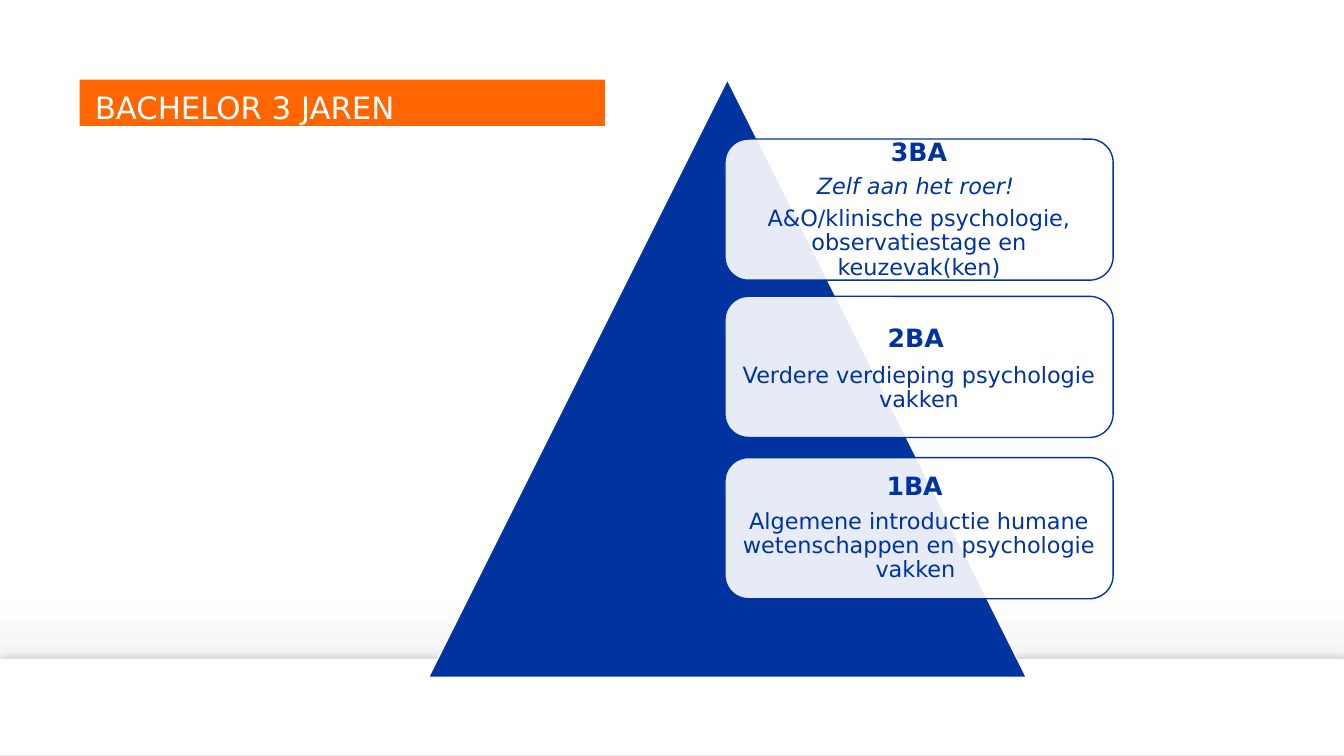
"""Build the slide on the three bachelor years in psychology."""
from dataclasses import dataclass

from lxml.etree import SubElement
from pptx import Presentation
from pptx.dml.color import RGBColor
from pptx.enum.shapes import MSO_SHAPE as Preset
from pptx.enum.text import MSO_ANCHOR as Anchor, MSO_AUTO_SIZE as AutoSize, PP_ALIGN as Align
from pptx.oxml.ns import qn
from pptx.shapes.autoshape import Shape
from pptx.slide import Slide
from pptx.text.text import TextFrame
from pptx.util import Inches, Pt


@dataclass(frozen=True)
class Theme:
    blue: str = "00339F"
    orange: str = "FF6600"
    white: str = "FFFFFF"
    black: str = "000000"
    background: tuple = ((0, "FFFFFF"), (79, "FEFEFE"), (92, "EDEDED"))
    font: str = "DejaVu Sans"
    spare_font: str = "Calibri"
    title_size: int = 22
    year_size: int = 18
    body_size: int = 16
    spare_size: int = 21


@dataclass(frozen=True)
class Box:
    left: float
    top: float
    width: float
    height: float

    def lengths(self) -> tuple:
        return tuple(Inches(n) for n in (self.left, self.top, self.width, self.height))


@dataclass(frozen=True)
class YearCard:
    top: float
    year: str
    body: str
    motto: str = ""
    spare: str = ""


THEME = Theme()
CARDS = (
    YearCard(1.38, "3BA", "A&O/klinische psychologie, observatiestage en keuzevak(ken)",
             motto="Zelf aan het roer! "),
    YearCard(2.94, "2BA", "Verdere verdieping psychologie vakken", spare=" "),
    YearCard(4.54, "1BA ", "Algemene introductie humane wetenschappen en psychologie vakken "),
)


def add_color(parent, color: str, alpha: int = 100) -> None:
    element = SubElement(parent, qn("a:srgbClr"), val=color)
    if alpha < 100:
        SubElement(element, qn("a:alpha"), val=str(alpha * 1000))


def paint_background(slide: Slide) -> None:
    fill = slide.background.fill
    fill.gradient()
    fill.gradient_angle = 270
    stops = slide.background._cSld.find(".//" + qn("a:gsLst"))
    for stop in list(stops):
        stops.remove(stop)
    for position, color in THEME.background:
        add_color(SubElement(stops, qn("a:gs"), pos=str(position * 1000)), color)


def add_panel(slide: Slide, preset: Preset, box: Box, fill: str,
              line: str = "", alpha: int = 100) -> Shape:
    shape = slide.shapes.add_shape(preset, *box.lengths())
    shape.shadow.inherit = False
    shape.fill.solid()
    shape.fill.fore_color.rgb = RGBColor.from_string(fill)
    if alpha < 100:
        color = shape._element.spPr.find(qn("a:solidFill")).find(qn("a:srgbClr"))
        SubElement(color, qn("a:alpha"), val=str(alpha * 1000))
    if line:
        shape.line.color.rgb = RGBColor.from_string(line)
        shape.line.width = Pt(1)
    else:
        shape.line.fill.background()
    return shape


def cast_shadow_upward(shape: Shape) -> None:
    effects = shape._element.spPr.find(qn("a:effectLst"))
    shadow = SubElement(effects, qn("a:outerShdw"), blurRad=str(Pt(4)), dist=str(Pt(3)),
                        dir=str(270 * 60000), algn="b", rotWithShape="0")
    add_color(shadow, THEME.black, alpha=10)


def add_run(paragraph, text: str, *, size: int, color: str, font: str = THEME.font,
            bold: bool = False, italic: bool = False) -> None:
    run = paragraph.add_run()
    run.text = text
    run.font.name, run.font.size = font, Pt(size)
    run.font.bold, run.font.italic = bold, italic
    run.font.color.rgb = RGBColor.from_string(color)


def set_frame(frame: TextFrame, anchor: Anchor, margins: tuple, wrap: bool) -> None:
    frame.auto_size = AutoSize.NONE
    frame.word_wrap = wrap
    frame.vertical_anchor = anchor
    (frame.margin_left, frame.margin_top,
     frame.margin_right, frame.margin_bottom) = (Inches(n) for n in margins)


def add_card(slide: Slide, card: YearCard) -> None:
    shape = add_panel(slide, Preset.ROUNDED_RECTANGLE, Box(7.19, card.top, 3.85, 1.4),
                      THEME.white, THEME.blue, alpha=90)
    frame = shape.text_frame
    set_frame(frame, Anchor.MIDDLE, (0.07,) * 4, wrap=True)
    lines = [(card.year, THEME.year_size, True, False),
             (card.motto, THEME.body_size, False, True),
             (card.body, THEME.body_size, False, False)]
    for text, size, bold, italic in (line for line in lines if line[0]):
        paragraph = frame.add_paragraph() if frame.paragraphs[0].runs else frame.paragraphs[0]
        paragraph.alignment = Align.CENTER
        paragraph.line_spacing = 0.9
        space_after = SubElement(paragraph._p.get_or_add_pPr(), qn("a:spcAft"))
        SubElement(space_after, qn("a:spcPct"), val="35000")
        add_run(paragraph, text, size=size, color=THEME.blue, bold=bold, italic=italic)
    if card.spare:
        add_run(frame.paragraphs[0], card.spare, size=THEME.spare_size, color=THEME.black,
                font=THEME.spare_font, bold=True)


def format_title(slide: Slide, text: str) -> None:
    title = slide.shapes.title
    title.left, title.top, title.width, title.height = Box(0.79, 0.79, 5.21, 0.46).lengths()
    title.fill.solid()
    title.fill.fore_color.rgb = RGBColor.from_string(THEME.orange)
    set_frame(title.text_frame, Anchor.BOTTOM, (0, 0.04, 0.16, 0), wrap=False)
    paragraph = title.text_frame.paragraphs[0]
    paragraph.alignment = Align.LEFT
    paragraph.line_spacing = 0.9
    properties = paragraph._p.get_or_add_pPr()
    properties.set("marL", str(Inches(0.15)))
    properties.set("indent", "0")
    add_run(paragraph, text, size=THEME.title_size, color=THEME.white)


def main() -> None:
    presentation = Presentation()
    presentation.slide_width, presentation.slide_height = Inches(13.33), Inches(7.5)
    slide = presentation.slides.add_slide(presentation.slide_layouts[5])
    paint_background(slide)
    floor = add_panel(slide, Preset.RECTANGLE, Box(0, 6.54, 13.33, 0.95), THEME.white)
    cast_shadow_upward(floor)
    add_panel(slide, Preset.ISOSCELES_TRIANGLE, Box(4.25, 0.79, 5.93, 5.93),
              THEME.blue, THEME.white)
    for card in CARDS:
        add_card(slide, card)
    format_title(slide, "BACHELOR 3 JAREN")
    presentation.save("out.pptx")


if __name__ == "__main__":
    main()
